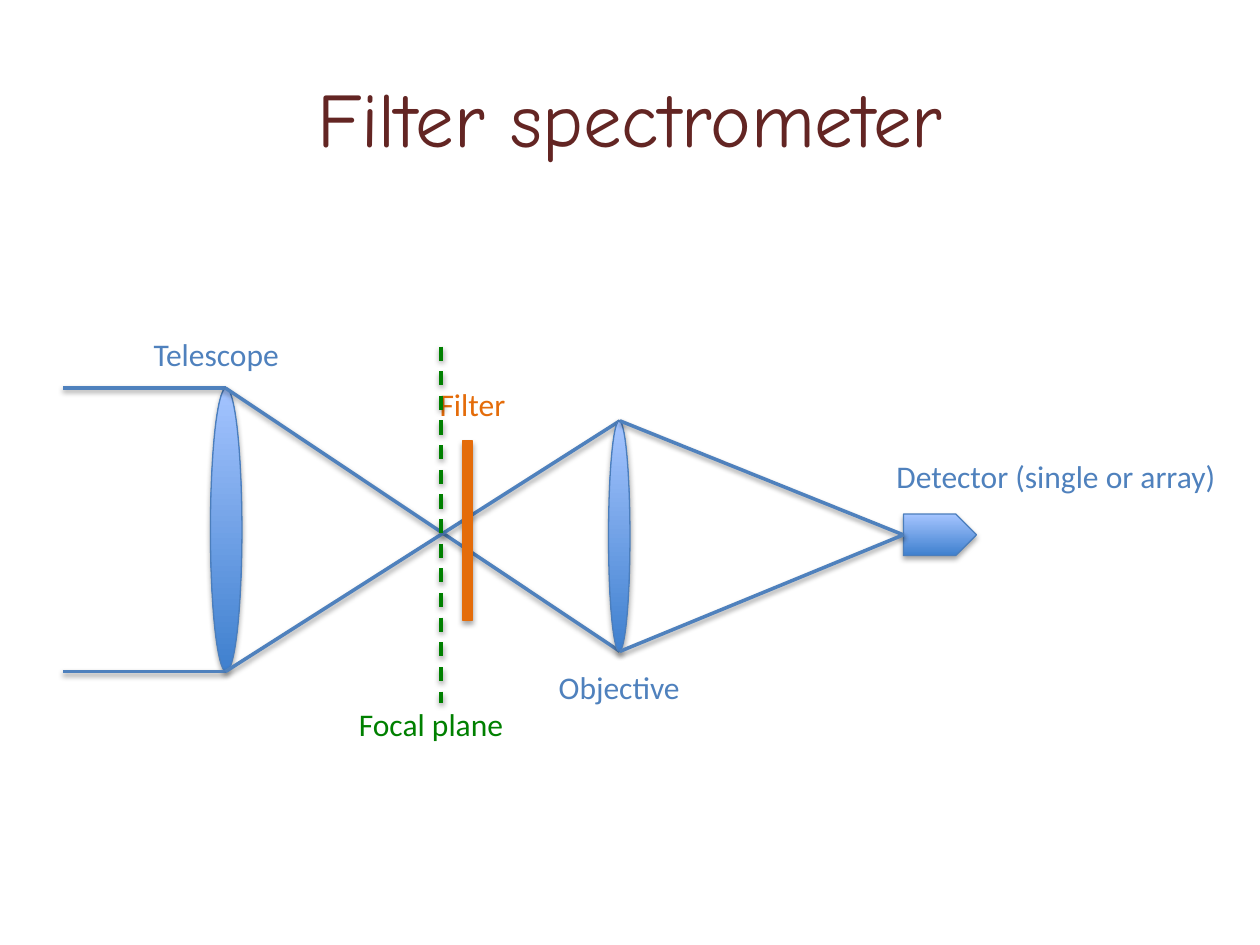
from lxml import etree
from pptx import Presentation
from pptx.dml.color import RGBColor
from pptx.enum import dml, shapes, text
from pptx.oxml import ns
from pptx.util import Inches, Pt

COLORS = {"title": "632523", "ray": "4F81BD", "edge": "4B7EBC", "glass_dark": "3F80CE",
          "glass_light": "A4C4FF", "filter": "E46C0A", "focal": "008000", "shadow": "000000"}


def rgb(name):
    return RGBColor.from_string(COLORS[name])


def add_shadow(s, distance, opacity):
    """Soft shadow straight below the object; called after its line is set."""
    effects = etree.SubElement(s._element.spPr, ns.qn("a:effectLst"))
    outer = etree.SubElement(effects, ns.qn("a:outerShdw"), blurRad=str(Pt(3.1)),
                             dist=str(Pt(distance)), dir="5400000", rotWithShape="0")
    color = etree.SubElement(outer, ns.qn("a:srgbClr"), val=COLORS["shadow"])
    etree.SubElement(color, ns.qn("a:alpha"), val=str(opacity * 1000))


def add_part(slide, kind, box, fill=None):
    """Optical part: plain when a fill is named, otherwise glass gradient."""
    s = slide.shapes.add_shape(kind, *map(Inches, box))
    if fill:
        s.fill.solid()
        s.fill.fore_color.rgb = rgb(fill)
    else:
        s.fill.gradient()
        s.fill.gradient_angle = 90
        for stop, name in zip(s.fill.gradient_stops, ("glass_dark", "glass_light")):
            stop.color.rgb = rgb(name)
    s.line.color.rgb = rgb(fill or "edge")
    s.line.width = Pt(0.75)
    add_shadow(s, 1.8, 35)
    return s


def add_line(slide, start, end, color="ray", dash=None):
    c = slide.shapes.add_connector(shapes.MSO_CONNECTOR.STRAIGHT,
                                   *map(Inches, (*start, *end)))
    c.line.color.rgb = rgb(color)
    c.line.width = Pt(2)
    if dash:
        c.line.dash_style = dash
    add_shadow(c, 1.6, 38)
    return c


def add_label(slide, box, label, color="ray", align=text.PP_ALIGN.CENTER):
    tf = slide.shapes.add_textbox(*map(Inches, box)).text_frame
    tf.word_wrap = True
    tf.auto_size = text.MSO_AUTO_SIZE.SHAPE_TO_FIT_TEXT
    tf.text = label
    p = tf.paragraphs[0]
    p.alignment = align
    p.font.size, p.font.name = Pt(18), "Calibri"
    p.font.color.rgb = rgb(color)


def add_title(slide, box, title):
    s = slide.shapes.title
    s.left, s.top, s.width, s.height = map(Inches, box)
    tf = s.text_frame
    tf.text = title
    tf.vertical_anchor = text.MSO_ANCHOR.MIDDLE
    p = tf.paragraphs[0]
    p.alignment = text.PP_ALIGN.CENTER
    font = p.runs[0].font
    font.size, font.name = Pt(44), "Comic Neue"
    font.color.rgb = rgb("title")


def add_optics(slide, box):
    """Light path from the telescope lens on the left to the detector."""
    left, top, width, height = box
    bottom = top + height
    lens_x, objective_x = left + 1.29, left + 4.42
    objective_top, objective_bottom = top + 0.26, bottom - 0.16
    oval = shapes.MSO_SHAPE.OVAL

    # Telescope lens, incoming rays and rays crossing at the focus
    add_part(slide, oval, (lens_x - 0.12, top, 0.25, height))
    for y, far_y in ((top, objective_bottom), (bottom, objective_top)):
        add_line(slide, (left, y), (lens_x, y))
        add_line(slide, (lens_x, y), (objective_x, far_y))

    # Objective lens and filter
    add_part(slide, oval, (objective_x - 0.09, objective_top, 0.17,
                           objective_bottom - objective_top))
    add_part(slide, shapes.MSO_SHAPE.RECTANGLE,
             (left + 3.17, top + 0.42, 0.08, 1.42), "filter")

    # Detector and the rays converging on it
    detector_x, detector_y = left + width - 0.58, top + 1.17
    detector = add_part(slide, shapes.MSO_SHAPE.PENTAGON,
                        (detector_x, detector_y - 0.17, 0.58, 0.33))
    for y in (objective_top, objective_bottom):
        ray = add_line(slide, (objective_x, y), (detector_x, detector_y))
        ray.end_connect(detector, 1)

    # Labels and focal plane
    start = text.PP_ALIGN.LEFT
    add_label(slide, (left + 2.5, top - 0.07, 1.5, 0.4), "Filter", "filter")
    add_label(slide, (left + 0.62, top - 0.47, 1.29, 0.4), "Telescope", align=start)
    add_label(slide, (left + 2.25, bottom + 0.22, 1.5, 0.4), "Focal plane", "focal", start)
    add_line(slide, (left + 3, top - 0.33), (left + 3, bottom + 0.25), "focal",
             dml.MSO_LINE.DASH)
    add_label(slide, (left + 3.75, bottom - 0.08, 1.33, 0.4), "Objective")
    add_label(slide, (left + 6.42, top + 0.5, 2.92, 0.4), "Detector (single or array)")


def main():
    prs = Presentation()
    prs.slide_width, prs.slide_height = Inches(10), Inches(7.5)
    slide = prs.slides.add_slide(prs.slide_layouts[5])
    add_title(slide, (0.5, 0.3, 9, 1.25), "Filter spectrometer")
    add_optics(slide, (0.5, 3.08, 7.25, 2.25))
    prs.save("out.pptx")


if __name__ == "__main__":
    main()
